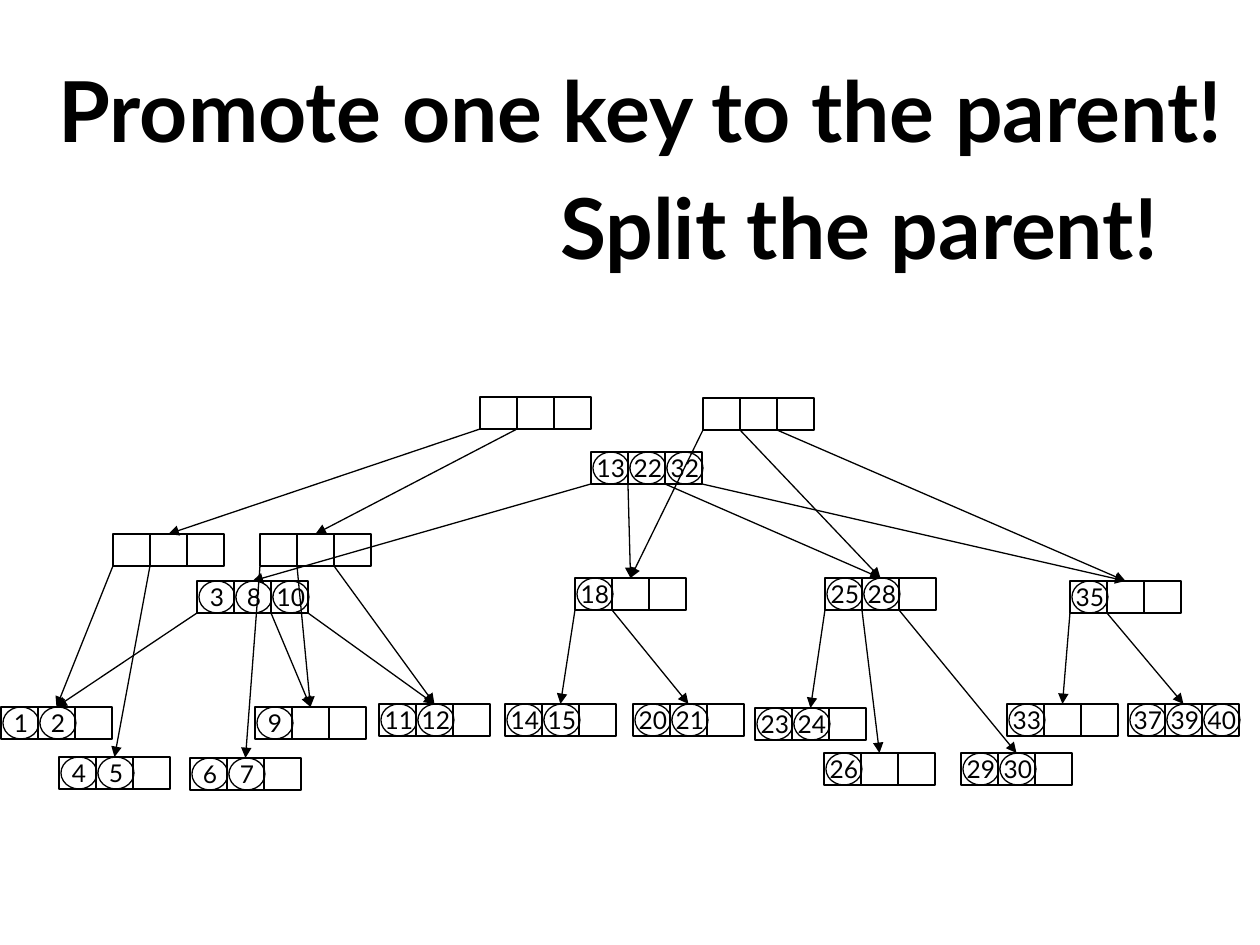
"""Builds the slide on splitting a parent node in a search tree."""
from dataclasses import dataclass
from typing import Optional

from lxml.etree import SubElement
from pptx import Presentation
from pptx.dml.color import RGBColor
from pptx.enum.shapes import MSO_CONNECTOR, MSO_SHAPE
from pptx.enum.text import MSO_ANCHOR, MSO_AUTO_SIZE, PP_ALIGN
from pptx.oxml.ns import qn
from pptx.shapes.autoshape import Shape
from pptx.slide import Slide
from pptx.util import Emu, Pt


@dataclass(frozen=True)
class Theme:
    """Colours, font and type sizes of the slide."""
    ink: RGBColor = RGBColor(0, 0, 0)
    font: str = "Lato"
    head: int = 48
    key: int = 14
    line: float = 0.75


@dataclass(frozen=True)
class Node:
    """A tree node with its keys and its child for each slot."""
    name: str
    x: int
    y: int
    keys: tuple[str, ...] = ()
    kids: tuple[Optional[str], ...] = ()


THEME = Theme()
DPI = 126
SLOTS = 3
CELL, TALL = 37, 32
RING, INSET = 36, 2

NODES = (
    Node("left", 480, 397, (), ("low", "mid")),
    Node("right", 703, 398, (), ("18", "25", "35")),
    Node("13", 591, 452, ("13", "22", "32"), ("3", "18", "25", "35")),
    Node("low", 113, 534, (), ("1", "4")),
    Node("mid", 260, 534, (), ("6", "9", "11")),
    Node("3", 197, 581, ("3", "8", "10"), ("1", None, "9", "11")),
    Node("18", 575, 578, ("18",), ("14", "20")),
    Node("25", 825, 578, ("25", "28"), ("23", "26", "29")),
    Node("35", 1070, 581, ("35",), ("33", "37")),
    Node("1", 1, 707, ("1", "2")),
    Node("4", 59, 757, ("4", "5")),
    Node("6", 190, 758, ("6", "7")),
    Node("9", 255, 707, ("9",)),
    Node("11", 379, 704, ("11", "12")),
    Node("14", 505, 704, ("14", "15")),
    Node("20", 633, 704, ("20", "21")),
    Node("23", 755, 708, ("23", "24")),
    Node("26", 824, 753, ("26",)),
    Node("29", 961, 753, ("29", "30")),
    Node("33", 1007, 704, ("33",)),
    Node("37", 1128, 704, ("37", "39", "40")),
)


def px(*sides: int) -> list[Emu]:
    """Turn pixels into EMU."""
    return [Emu(round(side * 914400 / DPI)) for side in sides]


def write(shape: Shape, text: str, size: int, bold: bool, wrap: bool) -> None:
    """Write one centred line into a shape."""
    frame = shape.text_frame
    frame.auto_size = MSO_AUTO_SIZE.NONE
    frame.word_wrap = wrap
    frame.vertical_anchor = MSO_ANCHOR.MIDDLE
    line = frame.paragraphs[0]
    line.alignment = PP_ALIGN.CENTER
    run = line.add_run()
    run.text = text
    run.font.name, run.font.size, run.font.bold = THEME.font, Pt(size), bold
    run.font.color.rgb = THEME.ink


def stroke(item) -> None:
    """Give a shape or connector the thin dark line."""
    item.line.color.rgb = THEME.ink
    item.line.width = Pt(THEME.line)


def frame(group, kind: MSO_SHAPE, x: int, y: int, wide: int) -> Shape:
    """Add an outlined shape without fill."""
    shape = group.shapes.add_shape(kind, *px(x, y, wide, TALL))
    shape.shadow.inherit = False
    shape.fill.background()
    stroke(shape)
    return shape


def draw(slide: Slide, node: Node) -> Shape:
    """Draw a node and return its middle cell."""
    group = slide.shapes.add_group_shape()
    cells = [frame(group, MSO_SHAPE.RECTANGLE, node.x + slot * CELL, node.y, CELL)
             for slot in range(SLOTS)]
    for slot, key in enumerate(node.keys):
        ring = frame(group, MSO_SHAPE.OVAL,
                     node.x + slot * CELL + INSET, node.y, RING)
        write(ring, key, THEME.key, False, False)
    return cells[SLOTS // 2]


def link(slide: Slide, node: Node, slot: int, goal: Shape) -> None:
    """Draw an arrow from a slot's lower corner to the top of a cell."""
    start = px(node.x + slot * CELL, node.y + TALL)
    arrow = slide.shapes.add_connector(
        MSO_CONNECTOR.STRAIGHT, *start, goal.left + goal.width // 2, goal.top)
    arrow.end_connect(goal, 0)
    stroke(arrow)
    props = arrow.element.spPr
    SubElement(props.find(qn("a:ln")), qn("a:tailEnd"), type="triangle")
    SubElement(props, qn("a:effectLst"))


def main() -> None:
    """Build and save the slide."""
    deck = Presentation()
    deck.slide_width, deck.slide_height = px(10 * DPI, 15 * DPI // 2)
    slide = deck.slides.add_slide(deck.slide_layouts[5])
    title = slide.shapes.title
    title.left, title.top, title.width, title.height = px(515, 174, 688, 103)
    write(title, "Split the parent!", THEME.head, True, True)
    goals = {node.name: draw(slide, node) for node in NODES}
    for node in NODES:
        for slot, kid in enumerate(node.kids):
            if kid:
                link(slide, node, slot, goals[kid])
    lead = slide.shapes.add_textbox(*px(40, 59, 1201, 100))
    write(lead, "Promote one key to the parent!", THEME.head, True, True)
    deck.save("out.pptx")


if __name__ == "__main__":
    main()
